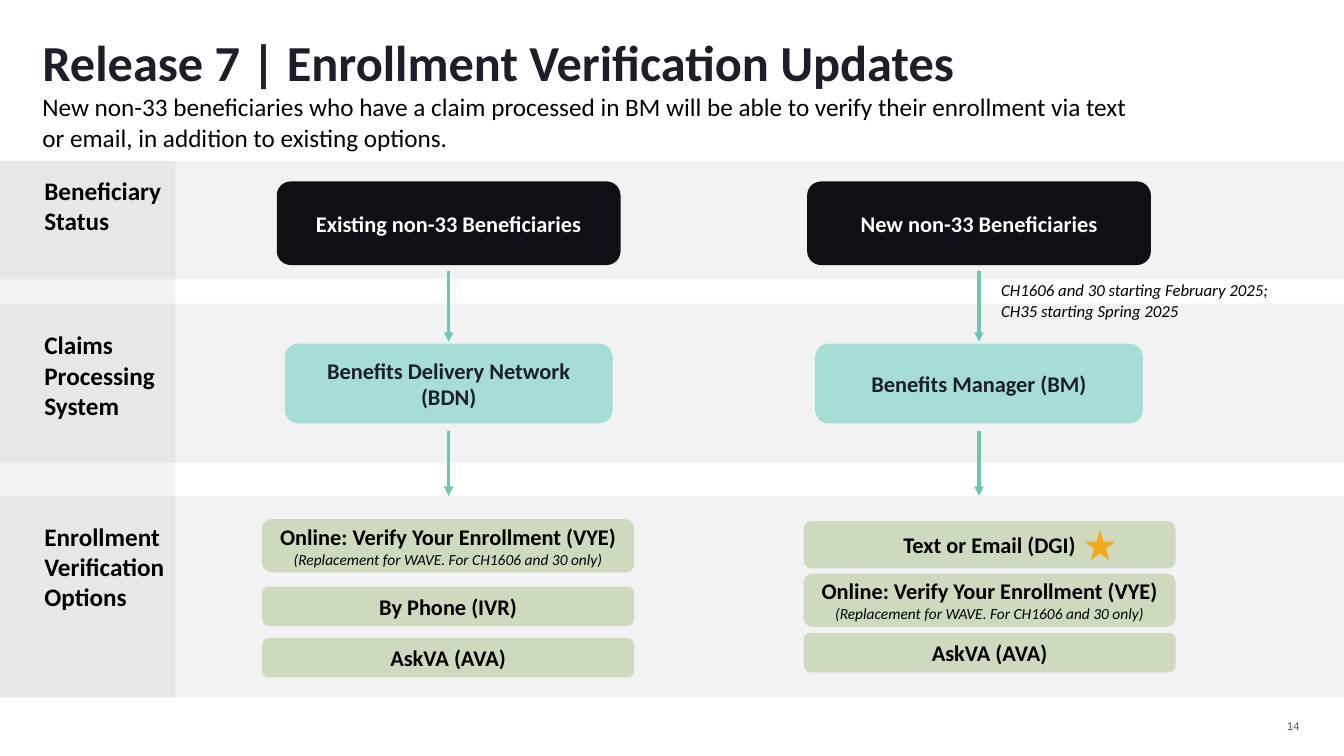
from lxml import etree
from pptx import Presentation
from pptx.dml.color import RGBColor
from pptx.enum.shapes import MSO_CONNECTOR, MSO_SHAPE
from pptx.enum.text import MSO_ANCHOR, PP_ALIGN
from pptx.oxml.ns import qn
from pptx.util import Inches, Pt

RECT, ROUND, STAR = MSO_SHAPE.RECTANGLE, MSO_SHAPE.ROUNDED_RECTANGLE, MSO_SHAPE.STAR_5_POINT
STRAIGHT = MSO_CONNECTOR.STRAIGHT
LEFT, CENTER, RIGHT = PP_ALIGN.LEFT, PP_ALIGN.CENTER, PP_ALIGN.RIGHT
TOP, MIDDLE = MSO_ANCHOR.TOP, MSO_ANCHOR.MIDDLE

WHITE = RGBColor(0xFF, 0xFF, 0xFF)
BLACK = RGBColor(0, 0, 0)
INK = RGBColor(0x1C, 0x1F, 0x2A)
NIGHT = RGBColor(0x0E, 0x10, 0x15)
SLATE = RGBColor(0x55, 0x57, 0x5F)
PALE = RGBColor(0xF2, 0xF2, 0xF2)
GRAY = RGBColor(0xBF, 0xBF, 0xBF)
MINT = RGBColor(0xA6, 0xDD, 0xD4)
TEAL = RGBColor(0x6A, 0xC6, 0xB7)
SAGE = RGBColor(0xCD, 0xDA, 0xBE)
GOLD = RGBColor(0xF4, 0xA8, 0x1B)

prs = Presentation()
prs.slide_width, prs.slide_height = Inches(13.33), Inches(7.5)
slide = prs.slides.add_slide(prs.slide_layouts[6])
shapes = slide.shapes


def add_box(kind, left, top, width, height, fill, lines=(), color=BLACK):
    """Add a filled shape; lines holds (text, size, bold, italic) per paragraph."""
    box = shapes.add_shape(kind, Inches(left), Inches(top), Inches(width), Inches(height))
    box.shadow.inherit = False
    box.fill.solid()
    box.fill.fore_color.rgb = fill
    box.line.fill.background()
    frame = box.text_frame
    frame.word_wrap = True
    frame.vertical_anchor = MIDDLE
    for i, (text, size, bold, italic) in enumerate(lines):
        para = frame.add_paragraph() if i else frame.paragraphs[0]
        para.alignment = CENTER
        run = para.add_run()
        run.text = text
        font = run.font
        font.name, font.size, font.bold, font.italic = "Calibri", Pt(size), bold, italic
        font.color.rgb = color
    return box


def add_text(left, top, width, height, text, size, color=BLACK, bold=False,
             italic=False, face="Calibri", align=LEFT, anchor=TOP, spacing=1.0):
    frame = shapes.add_textbox(Inches(left), Inches(top), Inches(width), Inches(height)).text_frame
    frame.word_wrap = True
    frame.vertical_anchor = anchor
    frame.margin_left = frame.margin_right = frame.margin_top = frame.margin_bottom = 0
    para = frame.paragraphs[0]
    para.alignment, para.line_spacing = align, spacing
    run = para.add_run()
    run.text = text
    font = run.font
    font.name, font.size, font.bold, font.italic = face, Pt(size), bold, italic
    font.color.rgb = color


# Bands and the label column
for top, height in [(4.92, 2), (3.01, 1.58), (1.6, 1.17)]:
    add_box(RECT, 0, top, 13.33, height, PALE)
column = add_box(RECT, 0, 1.6, 1.74, 5.32, GRAY)
tint = column.fill._xPr.find(qn("a:solidFill"))[0]
etree.SubElement(tint, qn("a:alpha"), val="20000")

# Heading and row labels
add_text(0.42, 0.42, 12.5, 0.49, "Release 7 | Enrollment Verification Updates", 36,
         INK, bold=True, spacing=0.8)
add_text(0.42, 0.91, 10.92, 0.43,
         "New non-33 beneficiaries who have a claim processed in BM will be able to verify "
         "their enrollment via text or email, in addition to existing options.", 18)
for top, label in [(1.74, "Beneficiary Status"), (3.27, "Claims Processing System"),
                   (5.17, "Enrollment Verification Options")]:
    add_text(0.44, top, 1.56, 0.49, label, 18, bold=True)

# Two flows: status, system, then options as (top, height, lines)
online = [("Online: Verify Your Enrollment (VYE)", 16, True, False),
          ("(Replacement for WAVE. For CH1606 and 30 only)", 11, False, True)]
phone = [("By Phone (IVR)", 16, True, False)]
digital = [("Text or Email (DGI)", 16, True, False)]
ask = [("AskVA (AVA)", 16, True, False)]
flows = [
    (4.45, 2.6, "Existing non-33 Beneficiaries", "Benefits Delivery Network (BDN)",
     [(5.15, 0.53, online), (5.82, 0.39, phone), (6.33, 0.39, ask)]),
    (9.71, 7.97, "New non-33 Beneficiaries", "Benefits Manager (BM)",
     [(5.17, 0.47, digital), (5.69, 0.53, online), (6.28, 0.39, ask)]),
]
for mid, left, status, system, options in flows:
    add_box(ROUND, mid - 3.41 / 2, 1.8, 3.41, 0.83, NIGHT, [(status, 16, True, False)], WHITE)
    add_box(ROUND, mid - 3.25 / 2, 3.41, 3.25, 0.79, MINT, [(system, 16, True, False)], INK)
    for top, height, lines in options:
        add_box(ROUND, left, top, 3.69, height, SAGE, lines)
    for start, end in [(2.69, 3.39), (4.28, 4.92)]:
        arrow = shapes.add_connector(STRAIGHT, Inches(mid), Inches(start), Inches(mid), Inches(end))
        arrow.line.color.rgb = TEAL
        arrow.line.width = Pt(2.25)
        etree.SubElement(arrow.line._get_or_add_ln(), qn("a:tailEnd"), type="triangle")
        etree.SubElement(arrow._element.spPr, qn("a:effectLst"))

# Highlight, note and page number
add_box(STAR, 10.76, 5.26, 0.3, 0.3, GOLD)
add_text(9.93, 2.78, 2.8, 0.4,
         "CH1606 and 30 starting February 2025; CH35 starting Spring 2025", 12, italic=True)
add_text(12.47, 7.09, 0.42, 0.23, "14", 8, SLATE, face="Arial", align=RIGHT, anchor=MIDDLE)

prs.save("out.pptx")
